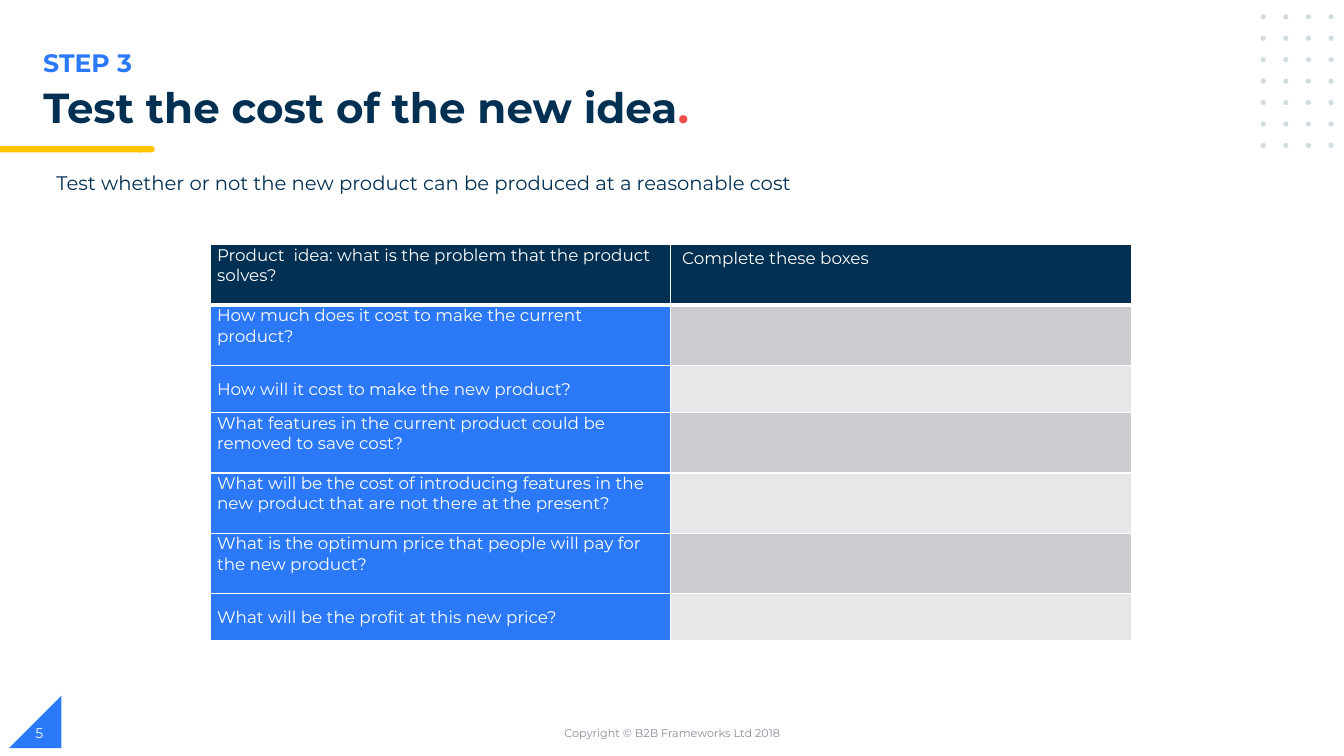
from lxml import etree
from pptx import Presentation
from pptx import util as u
from pptx.dml.color import RGBColor
from pptx.enum import shapes, text
from pptx.oxml.ns import qn

COLOURS = {
    "navy": "023053", "blue": "2B79F8", "yellow": "FFC600", "red": "F24E4E",
    "dots": "D1DBE0", "footer": "888C97", "white": "FFFFFF",
    "dark band": "CACCCF", "light band": "E6E7E9",
}
FONT = "Montserrat"


def add_run(paragraph, words, size, colour, bold=False):
    run = paragraph.add_run()
    run.text = words
    run.font.name = FONT
    run.font.size = u.Pt(size)
    run.font.bold = bold
    run.font.color.rgb = RGBColor.from_string(COLOURS[colour])


def add_plain_shape(kind, left, top, width, height, colour):
    """Add a filled preset shape without outline or shadow; lengths in cm."""
    shape = slide.shapes.add_shape(kind, u.Cm(left), u.Cm(top), u.Cm(width), u.Cm(height))
    shape.shadow.inherit = False
    shape.fill.solid()
    shape.fill.fore_color.rgb = RGBColor.from_string(COLOURS[colour])
    shape.line.fill.background()
    return shape


presentation = Presentation()
presentation.slide_width = u.Cm(33.87)
presentation.slide_height = u.Cm(19.05)
slide = presentation.slides.add_slide(presentation.slide_layouts[5])

# Decoration
corner = add_plain_shape(shapes.MSO_SHAPE.RIGHT_TRIANGLE, 0.23, 17.53, 1.32, 1.32, "blue")
corner._element.spPr.find(qn("a:xfrm")).set("flipH", "1")
add_plain_shape(shapes.MSO_SHAPE.FLOWCHART_TERMINATOR, 3.42, 3.68, 0.48, 0.16, "yellow")
add_plain_shape(shapes.MSO_SHAPE.RECTANGLE, 0, 3.68, 3.58, 0.16, "yellow")
for row in range(7):
    for column in range(4):
        add_plain_shape(shapes.MSO_SHAPE.OVAL, 31.77 + 0.57 * column, 0.36 + 0.54 * row,
                        0.13, 0.13, "dots")

# Title
title = slide.shapes.title
title.left, title.top, title.width, title.height = u.Cm(0.84), u.Cm(2.08), u.Cm(17.25), u.Cm(1.42)
title.text_frame.auto_size = text.MSO_AUTO_SIZE.NONE
title.text_frame.vertical_anchor = text.MSO_ANCHOR.TOP
paragraph = title.text_frame.paragraphs[0]
paragraph.alignment = text.PP_ALIGN.LEFT
paragraph.line_spacing = 0.9
add_run(paragraph, "Test the cost of the new idea", 30, "navy", True)
add_run(paragraph, ".", 30, "red", True)

# Single-line texts: words, left, top, width, height, size, colour, bold, alignment, anchor
LEFT, CENTRE = text.PP_ALIGN.LEFT, text.PP_ALIGN.CENTER
TOP, MIDDLE = text.MSO_ANCHOR.TOP, text.MSO_ANCHOR.MIDDLE
labels = [
    ("STEP 3", 0.84, 1.07, 17, 1.02, 18, "blue", True, LEFT, TOP),
    ("Test whether or not the new product can be produced at a reasonable cost",
     1.17, 4.17, 25, 0.86, 14, "navy", False, LEFT, TOP),
    ("Copyright © B2B Frameworks Ltd 2018",
     11.23, 17.95, 11.43, 1.02, 8, "footer", False, CENTRE, MIDDLE),
    ("5", 0.64, 17.95, 7.62, 1.02, 10, "white", False, LEFT, MIDDLE),
]
for words, left, top, width, height, size, colour, bold, alignment, anchor in labels:
    box = slide.shapes.add_textbox(u.Cm(left), u.Cm(top), u.Cm(width), u.Cm(height))
    box.text_frame.word_wrap = True
    box.text_frame.vertical_anchor = anchor
    paragraph = box.text_frame.paragraphs[0]
    paragraph.alignment = alignment
    add_run(paragraph, words, size, colour, bold)

# Table: first column, second column, row height
TALL, SHORT = 1.52, 1.19
rows = [
    ("Product  idea: what is the problem that the product solves?", " Complete these boxes", TALL),
    ("How much does it cost to make the current product?", "", TALL),
    ("How will it cost to make the new product?", "", SHORT),
    ("What features in the current product could be removed to save cost?", "", TALL),
    ("What will be the cost of introducing features in the new product "
     "that are not there at the present?", "", TALL),
    ("What is the optimum price that people will pay for the new product?", "", TALL),
    ("What will be the profit at this new price?", "", SHORT),
]
table_height = sum(height for _, _, height in rows)
table = slide.shapes.add_table(len(rows), 2, u.Cm(5.29), u.Cm(6.17),
                               u.Cm(23.22), u.Cm(table_height)).table
table.horz_banding = False
for column in table.columns:
    column.width = u.Cm(11.61)

for row, (question, answer, height) in enumerate(rows):
    table.rows[row].height = u.Cm(height)
    band = "dark band" if row % 2 else "light band"
    fills = ("navy", "navy") if row == 0 else ("blue", band)
    for column, words in enumerate((question, answer)):
        cell = table.cell(row, column)
        cell.margin_left = cell.margin_right = u.Cm(0.18)
        cell.margin_top = cell.margin_bottom = 0
        cell.vertical_anchor = MIDDLE if height == SHORT else TOP
        paragraph = cell.text_frame.paragraphs[0]
        if words:
            add_run(paragraph, words, 12, "white")
        if row == 0 and column == 1:
            paragraph.line_spacing = 1.15
        for side in ("lnL", "lnR", "lnT", "lnB"):
            under_header = (row, side) in ((0, "lnB"), (1, "lnT"))
            border = etree.SubElement(cell._tc.get_or_add_tcPr(), qn(f"a:{side}"),
                                      w=str(u.Pt(3 if under_header else 1)))
            line_fill = etree.SubElement(border, qn("a:solidFill"))
            etree.SubElement(line_fill, qn("a:srgbClr"), val=COLOURS["white"])
        cell.fill.solid()
        cell.fill.fore_color.rgb = RGBColor.from_string(COLOURS[fills[column]])

presentation.save("out.pptx")
